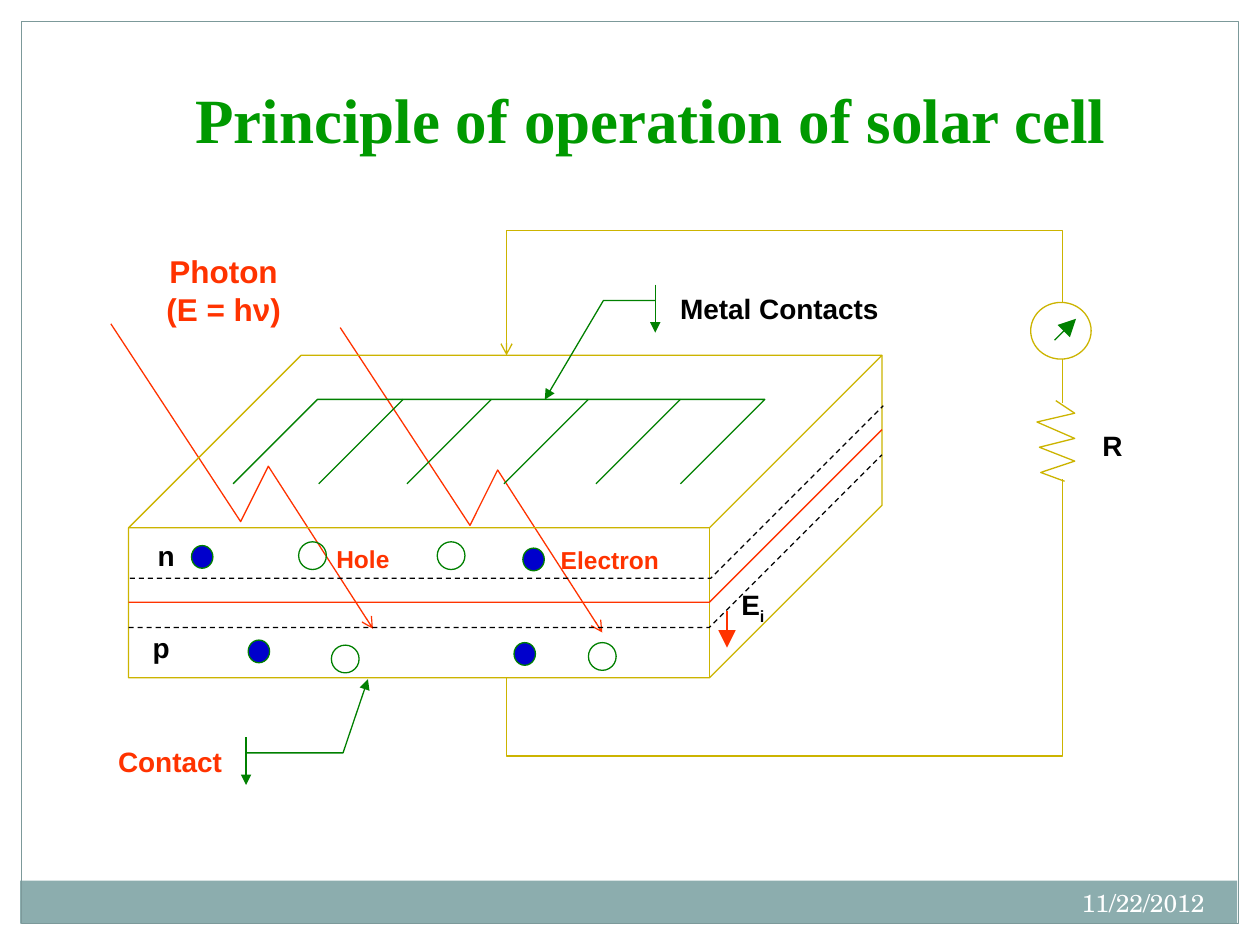
from lxml import etree
from pptx import Presentation
from pptx.dml.color import RGBColor
from pptx.enum.dml import MSO_LINE
from pptx.enum.shapes import MSO_CONNECTOR, MSO_SHAPE
from pptx.enum.text import MSO_ANCHOR, MSO_AUTO_SIZE, PP_ALIGN
from pptx.oxml.ns import qn
from pptx.util import Inches, Pt

BAND = RGBColor(0x8C, 0xAD, 0xAE)
FRAME = RGBColor(0x7C, 0x99, 0x9A)
WHITE = RGBColor(0xFF, 0xFF, 0xFF)
BLACK = RGBColor(0, 0, 0)
TITLE_GREEN = RGBColor(0, 0x99, 0)
GREEN = RGBColor(0, 0x80, 0)
RED = RGBColor(0xFF, 0x33, 0)
GOLD = RGBColor(0xCC, 0xB4, 0)
BLUE = RGBColor(0, 0, 0xCC)


def set_line(sp, color, dash=None):
    sp.line.color.rgb = color
    sp.line.width = Pt(0.75)
    if dash:
        sp.line.dash_style = dash


def add_arrowhead(sp, end, kind, size="med"):
    """Put an arrowhead on the line; end is headEnd (start) or tailEnd."""
    ln = sp.element.spPr.find(qn("a:ln"))
    etree.SubElement(ln, qn(f"a:{end}"), type=kind, w=size, len=size)


def write(sp, text, size=16, color=BLACK, font="Arial", bold=True,
          align=PP_ALIGN.CENTER, anchor=MSO_ANCHOR.MIDDLE, wrap=False,
          auto_size=MSO_AUTO_SIZE.SHAPE_TO_FIT_TEXT, subscript=""):
    tf = sp.text_frame
    tf.word_wrap = wrap
    tf.auto_size = auto_size
    tf.vertical_anchor = anchor
    for i, line in enumerate(text.split("\n")):
        p = tf.add_paragraph() if i else tf.paragraphs[0]
        p.alignment = align
        for part in filter(None, (line, subscript)):
            r = p.add_run()
            r.text = part
            r.font.name = font
            r.font.size = Pt(size)
            r.font.bold = bold
            r.font.color.rgb = color
        if subscript:
            r.font._element.set("baseline", "-25000")


def add_text(s, text, x, y, w, h, **fmt):
    write(s.shapes.add_textbox(Inches(x), Inches(y), Inches(w), Inches(h)), text, **fmt)


def add_shape(s, kind, x, y, w, h, line=None, fill=None, adj=()):
    sp = s.shapes.add_shape(kind, Inches(x), Inches(y), Inches(w), Inches(h))
    sp.shadow.inherit = False
    for i, value in enumerate(adj):
        sp.adjustments[i] = value
    if fill is None:
        sp.fill.background()
    else:
        sp.fill.solid()
        sp.fill.fore_color.rgb = fill
    if line is None:
        sp.line.fill.background()
    else:
        set_line(sp, line)
    return sp


def add_path(s, points, color, dash=None, arrow=False):
    """Draw an open polyline, with an open arrowhead at its first point if asked."""
    (x, y), *rest = [(Inches(a), Inches(b)) for a, b in points]
    builder = s.shapes.build_freeform(x, y)
    builder.add_line_segments(rest, close=False)
    sp = builder.convert_to_shape()
    sp.shadow.inherit = False
    sp.fill.background()
    set_line(sp, color, dash)
    if arrow:
        add_arrowhead(sp, "headEnd", "arrow")


def add_line(s, x1, y1, x2, y2, color, arrow=False):
    line = s.shapes.add_connector(MSO_CONNECTOR.STRAIGHT, Inches(x1), Inches(y1),
                                  Inches(x2), Inches(y2))
    set_line(line, color)
    if arrow:
        add_arrowhead(line, "tailEnd", "triangle", "lg")
    etree.SubElement(line.element.spPr, qn("a:effectLst"))


def add_callout(s, text, x, y, w, h, adj, color):
    sp = add_shape(s, MSO_SHAPE.LINE_CALLOUT_2_ACCENT_BAR, x, y, w, h, GREEN, adj=adj)
    add_arrowhead(sp, "tailEnd", "triangle")
    write(sp, text, color=color)


def add_frame(s):
    add_shape(s, MSO_SHAPE.RECTANGLE, 0.16, 6.99, 9.66, 0.34, fill=BAND)
    add_shape(s, MSO_SHAPE.RECTANGLE, 0.17, 0.17, 9.66, 7.16, FRAME)
    add_text(s, "11/22/2012", 6.33, 7, 3.33, 0.4, size=14, color=WHITE,
             font="TeX Gyre Schola", bold=False, align=PP_ALIGN.RIGHT,
             anchor=MSO_ANCHOR.TOP, wrap=True, auto_size=MSO_AUTO_SIZE.NONE)


def add_title(s):
    title = s.shapes.title
    title.left, title.top = Inches(0.33), Inches(0.58)
    title.width, title.height = Inches(9.67), Inches(0.71)
    write(title, "Principle of operation of solar cell", size=36, color=TITLE_GREEN,
          font="Times New Roman", anchor=MSO_ANCHOR.BOTTOM, wrap=True)


def add_photons(s):
    add_text(s, "Photon\n(E = hν)", 1.19, 1.95, 1.17, 0.7, size=18, color=RED, wrap=True)
    for x, y in ((2.7, 2.6), (0.88, 2.57)):
        steps = ((2.08, 2.42), (1.25, 1.13), (1.03, 1.57), (0, 0))
        add_path(s, [(x + dx, y + dy) for dx, dy in steps], RED, arrow=True)


def add_cell(s):
    add_shape(s, MSO_SHAPE.CUBE, 1.02, 2.82, 5.98, 2.56, GOLD, adj=[0.535])
    for x, y, color, dash in ((1.02, 4.78, RED, None),
                              (1.03, 4.59, BLACK, MSO_LINE.DASH),
                              (1.02, 4.98, BLACK, MSO_LINE.DASH)):
        add_path(s, [(x, y), (x + 4.61, y), (x + 5.98, y - 1.37)], color, dash)


def add_circuit(s):
    wire_x, cell_x = 8.43, 4.02
    add_path(s, [(cell_x, 2.82), (cell_x, 1.83), (wire_x, 1.83), (wire_x, 2.4)],
             GOLD, arrow=True)
    add_shape(s, MSO_SHAPE.OVAL, 8.18, 2.4, 0.48, 0.45, GOLD)
    add_path(s, [(8.38, 3.18), (8.53, 3.28), (8.23, 3.35), (8.53, 3.48), (8.25, 3.55),
                 (8.53, 3.66), (8.26, 3.75), (8.45, 3.82)], GOLD)
    add_path(s, [(cell_x, 5.38), (cell_x, 6), (wire_x, 6), (wire_x, 3.8)], GOLD)
    add_line(s, wire_x, 2.85, wire_x, 3.2, GOLD)
    add_line(s, 8.37, 2.7, 8.54, 2.53, GREEN, arrow=True)
    add_text(s, "R", 8.65, 3.35, 0.36, 0.37)


def add_metal_grid(s):
    top, slant = 3.17, 0.67
    bottom = top + slant
    add_path(s, [(1.85, bottom), (2.52, top), (6.07, top), (5.4, bottom)], GREEN)
    for x in (3.2, 3.9, 4.67, 5.4):
        add_line(s, x, top, x - slant, bottom, GREEN)


def add_carriers(s):
    for x, y in ((2.37, 4.3), (3.47, 4.3), (4.67, 5.1), (2.63, 5.12)):
        add_shape(s, MSO_SHAPE.OVAL, x, y, 0.22, 0.22, GREEN)
    for x, y in ((1.52, 4.33), (4.15, 4.35), (1.97, 5.08), (4.08, 5.1)):
        add_shape(s, MSO_SHAPE.OVAL, x, y, 0.17, 0.18, GREEN, BLUE)
    add_text(s, "Electron", 4.35, 4.28, 0.98, 0.33, size=14, color=RED)
    add_text(s, "Hole", 2.57, 4.27, 0.62, 0.33, size=14, color=RED)


def add_labels(s):
    add_callout(s, "Contact", 0.83, 5.85, 1.04, 0.38,
                (0.33, 1.08, 0.33, 1.82, -1.21, 2.01), RED)
    add_callout(s, "Metal Contacts", 5.29, 2.26, 1.79, 0.38,
                (0.33, -0.05, 0.33, -0.28, 2.4, -0.54), BLACK)
    add_text(s, "p", 1.11, 4.95, 0.34, 0.37)
    add_text(s, "n", 1.15, 4.22, 0.34, 0.37)
    add_text(s, "E", 5.78, 4.63, 0.39, 0.37, subscript="i")
    add_line(s, 5.77, 4.85, 5.77, 5.14, RED, arrow=True)


def main():
    prs = Presentation()
    prs.slide_width, prs.slide_height = Inches(10), Inches(7.5)
    s = prs.slides.add_slide(prs.slide_layouts[5])
    add_frame(s)
    add_title(s)
    add_photons(s)
    add_cell(s)
    add_circuit(s)
    add_metal_grid(s)
    add_carriers(s)
    add_labels(s)
    prs.save("out.pptx")


if __name__ == "__main__":
    main()
